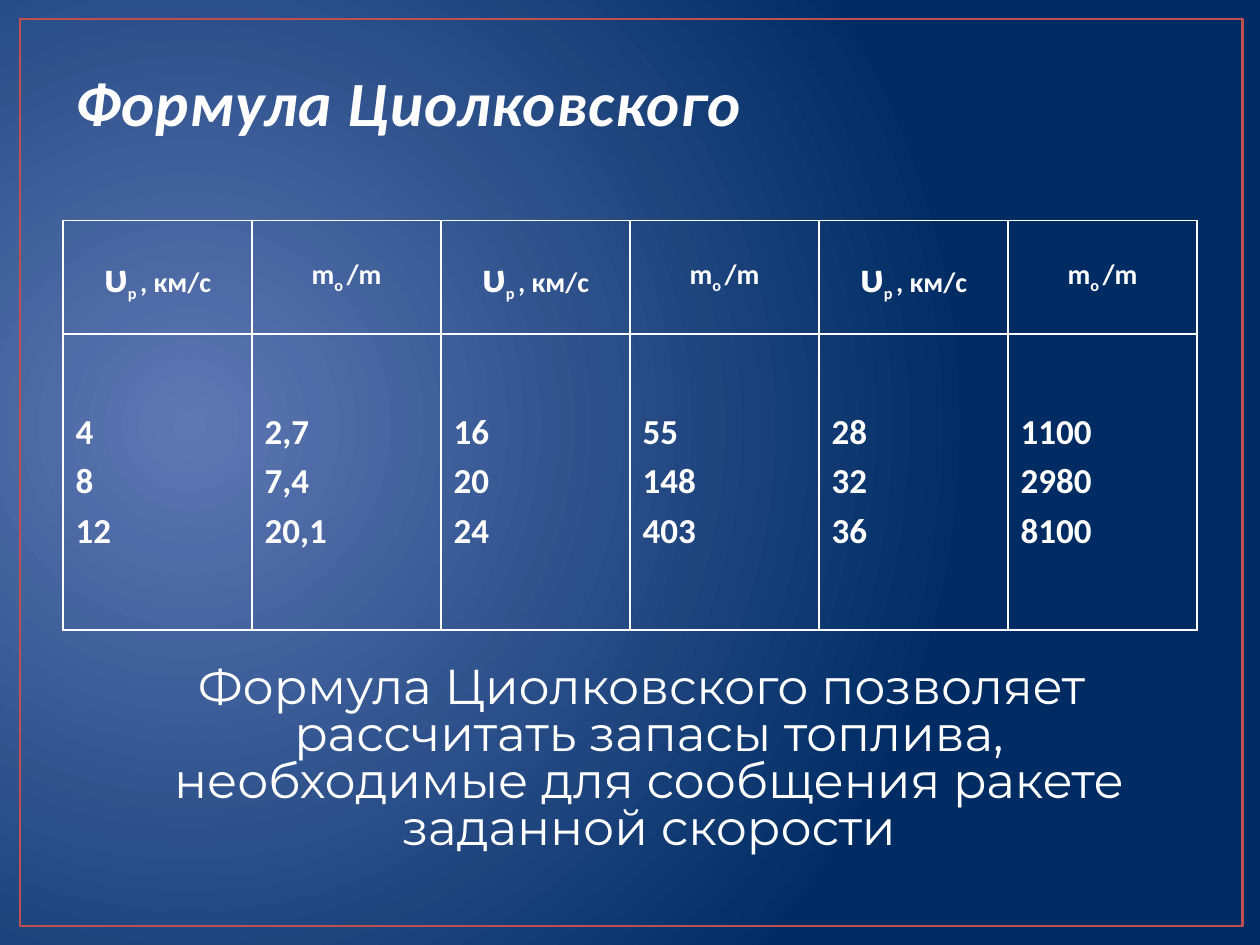
import dataclasses

import lxml.etree
import pptx
import pptx.dml.color
import pptx.enum.dml
import pptx.enum.shapes
import pptx.enum.text
import pptx.oxml
import pptx.oxml.ns
import pptx.util


@dataclasses.dataclass(frozen=True)
class Theme:
    glow: str = "5E78B4"
    navy: str = "002C63"
    frame: str = "C0504D"
    title: str = "FFFEFE"
    outline: str = "254061"
    white: str = "FFFFFF"
    heading_font: str = "Calibri"
    body_font: str = "Montserrat"
    title_size: int = 36
    symbol_size: int = 25
    unit_size: int = 16
    value_size: int = 20
    body_size: int = 28
    space_share: float = 0.2


def style_font(font, name, size, colour, bold=False, italic=False):
    font.name = name
    font.size = pptx.util.Pt(size)
    font.bold = bold
    font.italic = italic
    font.color.rgb = pptx.dml.color.RGBColor.from_string(colour)


def add_fill(parent, colour):
    fill = lxml.etree.SubElement(parent, pptx.oxml.ns.qn("a:solidFill"))
    lxml.etree.SubElement(fill, pptx.oxml.ns.qn("a:srgbClr"), val=colour)


theme = Theme()
presentation = pptx.Presentation()
presentation.slide_width = pptx.util.Inches(10)
presentation.slide_height = pptx.util.Inches(7.5)
column = presentation.slide_width // 20
row = presentation.slide_height // 15
slide = presentation.slides.add_slide(presentation.slide_layouts[6])

background = slide.background.fill
background.gradient()
for stop, colour in zip(background.gradient_stops, (theme.glow, theme.navy)):
    stop.color.rgb = pptx.dml.color.RGBColor.from_string(colour)
gradient = slide.element.xpath(".//p:bgPr/a:gradFill")[0]
for position, stop in zip(("0", "100000"), gradient.xpath("./a:gsLst/a:gs")):
    stop.set("pos", position)
for linear in gradient.xpath("./a:lin"):
    gradient.remove(linear)
circle = lxml.etree.Element(pptx.oxml.ns.qn("a:path"), {"path": "circle"})
lxml.etree.SubElement(circle, pptx.oxml.ns.qn("a:fillToRect"),
                      l="15000", t="50000", r="85000", b="60000")
gradient.xpath("./a:gsLst")[0].addnext(circle)

frame = slide.shapes.add_shape(
    pptx.enum.shapes.MSO_SHAPE.RECTANGLE,
    int(0.32 * column), int(0.3 * row), int(19.4 * column), int(14.4 * row))
frame.shadow.inherit = False
frame.fill.background()
frame.line.color.rgb = pptx.dml.color.RGBColor.from_string(theme.frame)
frame.line.width = pptx.util.Pt(1.5)

title = slide.shapes.add_textbox(column, int(0.6 * row), 18 * column, int(1.7 * row))
title.text_frame.word_wrap = True
title.text_frame.vertical_anchor = pptx.enum.text.MSO_ANCHOR.BOTTOM
title_run = title.text_frame.paragraphs[0].add_run()
title_run.text = "Формула Циолковского"
style_font(title_run.font, theme.heading_font, theme.title_size, theme.title, True, True)
title_properties = title.element.xpath(".//a:rPr")[0]
title_properties.set("spc", "50")
outline = lxml.etree.Element(pptx.oxml.ns.qn("a:ln"), w=str(pptx.util.Pt(1.05)))
add_fill(outline, theme.outline)
title_properties.insert(0, outline)

speed_heading = (("υ", theme.symbol_size, 0), ("p ", theme.unit_size, -25),
                 (", км/с", theme.unit_size, 0))
mass_heading = (("m", theme.unit_size, 0), ("o ", theme.unit_size, -25),
                ("/m", theme.unit_size, 0))
values = (("4", "8", "12"), ("2,7", "7,4", "20,1"), ("16", "20", "24"),
          ("55", "148", "403"), ("28", "32", "36"), ("1100", "2980", "8100"))

table_shape = slide.shapes.add_table(
    2, len(values), column, int(3.5 * row), 18 * column, int(6.5 * row))
table = table_shape.table
table.first_row = False
table.horz_banding = False
for table_row, height in zip(table.rows, (1.8, 4.7)):
    table_row.height = int(height * row)

for index, numbers in enumerate(values):
    table.columns[index].width = 3 * column
    heading = table.cell(0, index).text_frame.paragraphs[0]
    heading.alignment = pptx.enum.text.PP_ALIGN.CENTER
    pieces = mass_heading if index % 2 else speed_heading
    heading.space_before = pptx.util.Pt(theme.space_share * pieces[0][1])
    for text, size, baseline in pieces:
        run = heading.add_run()
        run.text = text
        style_font(run.font, theme.heading_font, size, theme.white, True)
        if baseline:
            heading.runs[-1].font._element.set("baseline", str(baseline * 1000))

    value_cell = table.cell(1, index)
    value_cell.text = "\n".join(numbers)
    for paragraph in value_cell.text_frame.paragraphs:
        paragraph.space_before = pptx.util.Pt(theme.space_share * theme.value_size)
        style_font(paragraph.font, theme.heading_font, theme.value_size, theme.white, True)

for cell in table.iter_cells():
    cell.vertical_anchor = pptx.enum.text.MSO_ANCHOR.MIDDLE
    cell.fill.background()
for cell_properties in table_shape.element.xpath(".//a:tcPr"):
    for position, side in enumerate(("a:lnL", "a:lnR", "a:lnT", "a:lnB")):
        border = lxml.etree.Element(pptx.oxml.ns.qn(side), w=str(pptx.util.Pt(1)))
        add_fill(border, theme.white)
        cell_properties.insert(position, border)

summary = slide.shapes.add_textbox(
    int(0.86 * column), int(10.48 * row), int(18.12 * column), int(3.24 * row))
summary.text_frame.word_wrap = True
paragraph = summary.text_frame.paragraphs[0]
paragraph.text = ("Формула Циолковского позволяет рассчитать запасы топлива, "
                  "необходимые для сообщения ракете заданной скорости")
paragraph.alignment = pptx.enum.text.PP_ALIGN.CENTER
paragraph.line_spacing = 0.8
paragraph.space_before = pptx.util.Pt(theme.space_share * theme.body_size)
style_font(paragraph.font, theme.body_font, theme.body_size, theme.white)
summary_properties = summary.element.xpath(".//a:pPr")[0]
summary_properties.set("marL", str(pptx.util.Inches(0.38)))
summary_properties.set("indent", str(pptx.util.Inches(-0.12)))

presentation.save("out.pptx")
